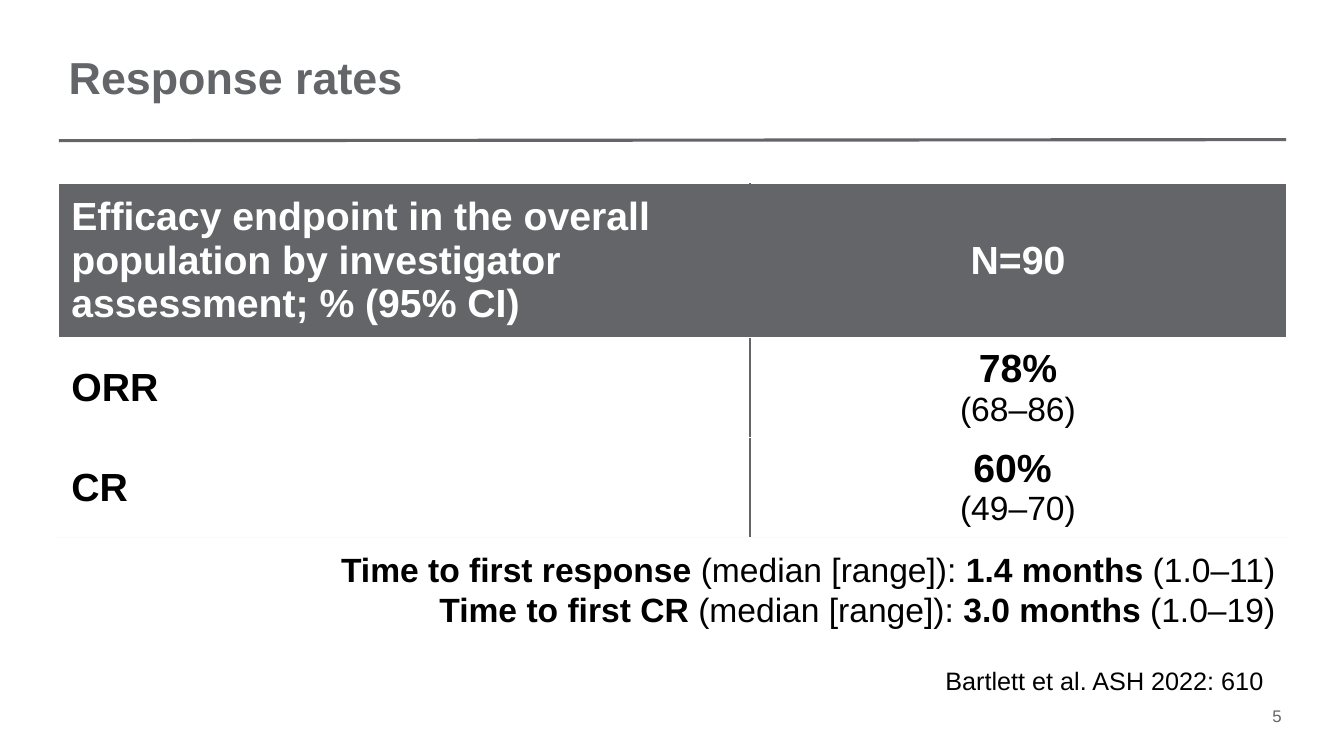
from lxml import etree
from pptx import Presentation
from pptx.dml.color import RGBColor
from pptx.enum.shapes import MSO_CONNECTOR
from pptx.enum.text import MSO_ANCHOR, MSO_AUTO_SIZE, PP_ALIGN
from pptx.oxml.ns import qn
from pptx.util import Pt

PX = 9525  # EMU per px, 96 px to the inch
FONT = "Arial"
COLORS = {"grey": "636569", "white": "FFFFFF", "black": "000000", "hairline": "FAFAFA"}


def px(n):
    return n * PX


def rgb(name):
    return RGBColor.from_string(COLORS[name])


def style(r, size, color="black", bold=False):
    r.font.name = FONT
    r.font.size = Pt(size)
    r.font.bold = bold
    r.font.color.rgb = rgb(color)


def add_text(slide, box, lines, size, color="black", align=PP_ALIGN.LEFT, wrap=True):
    """Each line is a list of (text, bold) runs."""
    sp = slide.shapes.add_textbox(*map(px, box))
    tf = sp.text_frame
    tf.word_wrap = wrap
    for i, runs in enumerate(lines):
        p = tf.add_paragraph() if i else tf.paragraphs[0]
        p.alignment = align
        for text, bold in runs:
            r = p.add_run()
            r.text = text
            style(r, size, color, bold)
    return tf


def add_title(slide, text):
    tf = add_text(slide, (56, 25, 866, 95), [[(text, True)]], 32, "grey")
    tf.vertical_anchor = MSO_ANCHOR.MIDDLE
    tf.paragraphs[0].line_spacing = Pt(38.4)


def add_rule(slide, x1, y1, x2, y2):
    line = slide.shapes.add_connector(MSO_CONNECTOR.STRAIGHT, px(x1), px(y1), px(x2), px(y2))
    line.line.color.rgb = rgb("grey")
    line.line.width = Pt(2.25)
    etree.SubElement(line._element.spPr, qn("a:effectLst"))


def add_border(cell, side, color, width):
    ln = etree.SubElement(cell._tc.get_or_add_tcPr(), qn("a:" + side), w=str(Pt(width)))
    fill = etree.SubElement(ln, qn("a:solidFill"))
    etree.SubElement(fill, qn("a:srgbClr"), val=COLORS[color])


def format_cell(cell, text, header, first_col):
    # Borders come before the fill in the cell properties
    add_border(cell, "lnR" if first_col else "lnL", "grey", 1.5)
    if header:
        cell.fill.solid()
        cell.fill.fore_color.rgb = rgb("grey")
    else:
        add_border(cell, "lnB", "hairline", 1)
        cell.fill.background()
    cell.vertical_anchor = MSO_ANCHOR.MIDDLE
    cell.margin_left = cell.margin_right = px(12)
    cell.margin_top = cell.margin_bottom = px(6)
    p = cell.text_frame.paragraphs[0]
    p.text = text
    p.alignment = PP_ALIGN.LEFT if first_col else PP_ALIGN.CENTER
    p.space_after = Pt(2)
    # The rate is bold, the interval below it is smaller and regular
    for i, r in enumerate(p.runs):
        style(r, 24 if i else 28, "white" if header else "black", i == 0)


def add_rates_table(slide, x, y, widths, heights, rows):
    frame = slide.shapes.add_table(len(rows), len(widths), px(x), px(y),
                                   px(sum(widths)), px(sum(heights)))
    table = frame.table
    table.first_row = table.horz_banding = False
    for column, width in zip(table.columns, widths):
        column.width = px(width)
    for i, (row, height) in enumerate(zip(rows, heights)):
        table.rows[i].height = px(height)
        for j, text in enumerate(row):
            format_cell(table.cell(i, j), text, i == 0, j == 0)


def main():
    prs = Presentation()
    prs.slide_width, prs.slide_height = px(1280), px(720)
    slide = prs.slides.add_slide(prs.slide_layouts[6])

    # Heading and rule
    add_title(slide, "Response rates")
    add_rule(slide, 56, 134, 1225, 133)

    # Response table
    add_rates_table(slide, 56, 175, (658, 511), (136, 89, 89), [
        ("Efficacy endpoint in the overall population by investigator assessment; % (95% CI)",
         "N=90"),
        ("ORR", "78%\v(68–86)"),
        ("CR", "60% \v(49–70)"),
    ])

    # Time to response
    add_text(slide, (193, 518, 1031, 87), [
        [("Time to first response ", True), ("(median [range]): ", False),
         ("1.4 months", True), (" (1.0–11)", False)],
        [("Time to first CR ", True), ("(median [range]): ", False),
         ("3.0 months ", True), ("(1.0‒19)", False)],
    ], 24, align=PP_ALIGN.RIGHT)

    # Citation and page number
    tf = add_text(slide, (891, 629, 325, 38), [[("Bartlett et al. ASH 2022: 610", False)]],
                  18, wrap=False)
    tf.auto_size = MSO_AUTO_SIZE.SHAPE_TO_FIT_TEXT
    add_text(slide, (966, 667, 264, 29), [[("5", False)]], 12, "grey", PP_ALIGN.RIGHT)

    prs.save("out.pptx")


if __name__ == "__main__":
    main()
